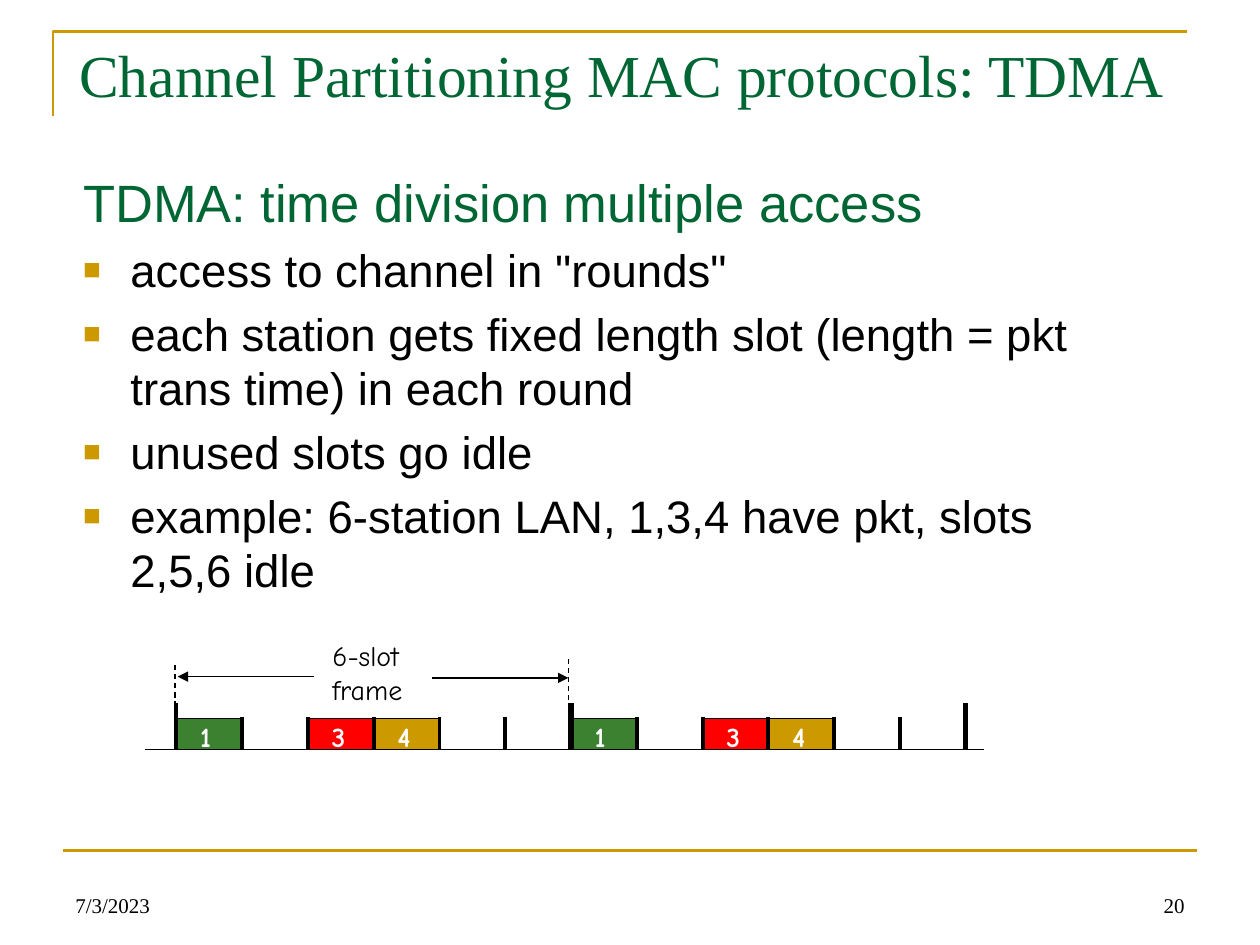
from dataclasses import dataclass

from lxml import etree
from pptx import Presentation
from pptx.dml.color import RGBColor
from pptx.enum.dml import MSO_LINE
from pptx.enum.shapes import MSO_CONNECTOR, MSO_SHAPE
from pptx.enum.text import MSO_ANCHOR, MSO_AUTO_SIZE, PP_ALIGN
from pptx.oxml.ns import qn
from pptx.util import Inches, Pt

RECT = MSO_SHAPE.RECTANGLE
LINE = MSO_CONNECTOR.STRAIGHT
DASH = MSO_LINE.DASH
TOP, LOW = MSO_ANCHOR.TOP, MSO_ANCHOR.BOTTOM
LEFT, RIGHT = PP_ALIGN.LEFT, PP_ALIGN.RIGHT
FIXED = MSO_AUTO_SIZE.NONE

HUES = {"gold": "CC9900", "dark": "006633", "green": "3B812F",
        "red": "FF0000", "black": "000000", "white": "FFFFFF"}
SERIF, SANS, COMIC = "Times New Roman", "Arial", "Comic Neue"
START, PITCH, BASE, SLOTS = 1.4, 0.522, 5.95, 6


@dataclass
class Style:
    font: str
    size: float
    hue: str = "black"
    bold: bool = False


@dataclass
class Packet:
    slot: int
    label: str
    hue: str


def color(name: str) -> RGBColor:
    return RGBColor.from_string(HUES[name])


def add_run(para, text: str, style: Style) -> None:
    run = para.add_run()
    run.text = text
    run.font.name = style.font
    run.font.size = Pt(style.size)
    run.font.bold = style.bold
    run.font.color.rgb = color(style.hue)


def place(shape, left: float, top: float, width: float, height: float) -> None:
    shape.left, shape.top = Inches(left), Inches(top)
    shape.width, shape.height = Inches(width), Inches(height)


def add_label(slide, box: tuple, lines: list[str], style: Style,
              wrap: bool = False, anchor=TOP, align=LEFT) -> None:
    frame = slide.shapes.add_textbox(*map(Inches, box)).text_frame
    frame.word_wrap = wrap
    frame.vertical_anchor = anchor
    for i, line in enumerate(lines):
        para = frame.add_paragraph() if i else frame.paragraphs[0]
        para.alignment = align
        add_run(para, line, style)


def add_line(slide, start: tuple, end: tuple, width: float = 0.75,
             hue: str = "black", dash: bool = False, arrow: bool = False) -> None:
    line = slide.shapes.add_connector(LINE, *map(Inches, start + end))
    line.line.color.rgb = color(hue)
    line.line.width = Pt(width)
    if dash:
        line.line.dash_style = DASH
    if arrow:
        etree.SubElement(line.line._get_or_add_ln(), qn("a:tailEnd"), type="triangle")
    etree.SubElement(line._element.spPr, qn("a:effectLst"))


def add_bullet(para, char: str | None) -> None:
    props = para._p.get_or_add_pPr()
    if char is None:
        etree.SubElement(props, qn("a:buNone"))
        return
    tint = etree.SubElement(props, qn("a:buClr"))
    etree.SubElement(tint, qn("a:srgbClr"), val=HUES["gold"])
    etree.SubElement(props, qn("a:buSzPct"), val="65000")
    etree.SubElement(props, qn("a:buFont"), typeface=SANS)
    etree.SubElement(props, qn("a:buChar"), char=char)


def add_rules(slide) -> None:
    pen = slide.shapes.build_freeform(Inches(0.42), Inches(0.92))
    pen.add_line_segments([(Inches(0.42), Inches(0.25)),
                           (Inches(9.42), Inches(0.25))], close=False)
    edge = pen.convert_to_shape()
    edge.shadow.inherit = False
    edge.fill.background()
    edge.line.color.rgb = color("gold")
    edge.line.width = Pt(1.5)
    add_line(slide, (0.5, 6.75), (9.5, 6.75), 1.5, "gold")


def add_title(slide, text: str) -> None:
    title = slide.shapes.title
    place(title, 0.53, 0.25, 9.16, 1.25)
    frame = title.text_frame
    frame.auto_size = FIXED
    frame.vertical_anchor = TOP
    frame.paragraphs[0].alignment = LEFT
    add_run(frame.paragraphs[0], text, Style(SERIF, 34, "dark"))


def add_body(slide, head: str, items: list[str]) -> None:
    body = slide.placeholders[1]
    place(body, 0.56, 1.3, 8.5, 3.2)
    frame = body.text_frame
    frame.auto_size = FIXED
    add_bullet(frame.paragraphs[0], None)
    add_run(frame.paragraphs[0], head, Style(SANS, 30, "dark"))
    for item in items:
        para = frame.add_paragraph()
        add_bullet(para, "■")
        add_run(para, item, Style(SANS, 26))


def add_packet(slide, left: float, packet: Packet) -> None:
    left += packet.slot * PITCH
    box = slide.shapes.add_shape(RECT, *map(Inches, (left, 5.7, PITCH, 0.25)))
    box.shadow.inherit = False
    box.fill.solid()
    box.fill.fore_color.rgb = color(packet.hue)
    box.line.color.rgb = color("black")
    box.line.width = Pt(0.75)
    add_label(slide, (left + 0.09, 5.66, 0.34, 0.37), [packet.label],
              Style(COMIC, 16, "white", True))


def add_chain(slide) -> None:
    packets = [Packet(0, "1", "green"), Packet(2, "3", "red"), Packet(3, "4", "gold")]
    span = SLOTS * PITCH
    add_line(slide, (1.15, BASE), (7.81, BASE))
    for turn in range(2):
        for packet in packets:
            add_packet(slide, START + turn * span, packet)
    for i in range(2 * SLOTS + 1):
        x = START + i * PITCH
        tall = i % SLOTS == 0
        add_line(slide, (x, 5.58 if tall else 5.69), (x, BASE),
                 3 if tall and i else 2.25)
    add_label(slide, (2.54, 5.02, 0.83, 0.64), ["6-slot", "frame"], Style(COMIC, 16))
    add_line(slide, (3.43, 5.38), (START + span - 0.02, 5.38), arrow=True)
    add_line(slide, (2.49, 5.37), (START + 0.01, 5.37), arrow=True)
    for x, y in ((START - 0.01, 5.28), (START + span - 0.02, 5.23)):
        add_line(slide, (x, y), (x, y + 0.33), dash=True)


def main() -> None:
    deck = Presentation()
    deck.slide_width, deck.slide_height = Inches(10), Inches(7.5)
    slide = deck.slides.add_slide(deck.slide_layouts[1])
    add_rules(slide)
    small = Style(SERIF, 12)
    add_label(slide, (0.5, 6.83, 2.33, 0.5), ["7/3/2023"], small, True, LOW)
    add_label(slide, (7.17, 6.83, 2.33, 0.5), ["20"], small, True, LOW, RIGHT)
    add_title(slide, "Channel Partitioning MAC protocols: TDMA")
    add_body(slide, "TDMA: time division multiple access", [
        'access to channel in "rounds"',
        "each station gets fixed length slot (length = pkt trans time) in each round",
        "unused slots go idle",
        "example: 6-station LAN, 1,3,4 have pkt, slots 2,5,6 idle",
    ])
    add_chain(slide)
    deck.save("out.pptx")


if __name__ == "__main__":
    main()
